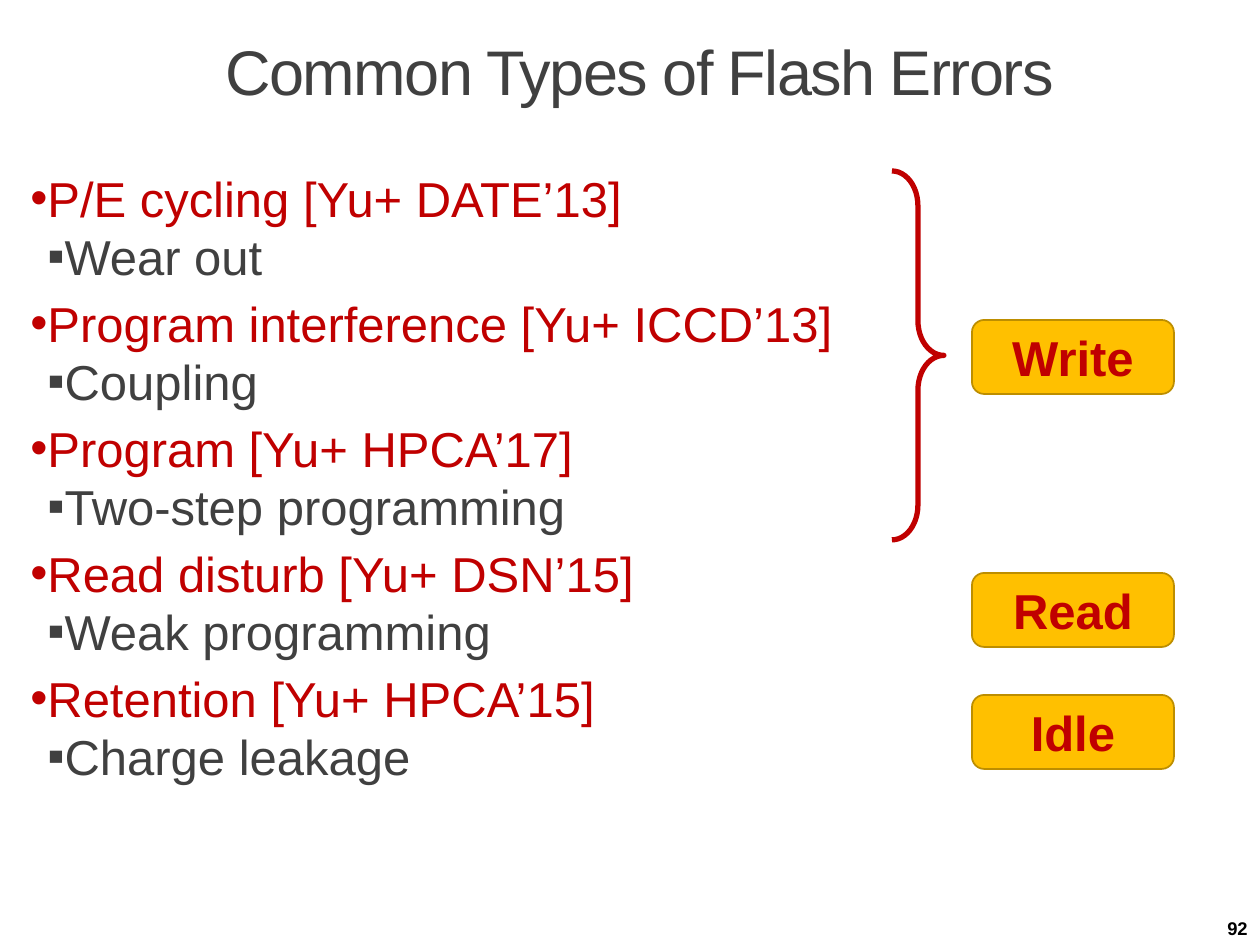
from lxml import etree
from pptx import Presentation
from pptx.dml.color import RGBColor
from pptx.enum.shapes import MSO_SHAPE
from pptx.enum.text import MSO_ANCHOR, PP_ALIGN
from pptx.oxml.ns import qn
from pptx.util import Pt

PX = 914400 // 126
ROUNDED, BRACE = MSO_SHAPE.ROUNDED_RECTANGLE, MSO_SHAPE.RIGHT_BRACE
TOP, MIDDLE, BOTTOM = MSO_ANCHOR.TOP, MSO_ANCHOR.MIDDLE, MSO_ANCHOR.BOTTOM
CENTER, RIGHT = PP_ALIGN.CENTER, PP_ALIGN.RIGHT
COLORS = {name: RGBColor.from_string(value) for name, value in {
    "white": "FFFFFF", "black": "000000", "gray": "404040",
    "red": "C00000", "amber": "FFC000", "border": "BD8E00"}.items()}


def format_text(paragraph, size, color, bold=False, align=None):
    paragraph.alignment = align
    font = paragraph.runs[0].font
    font.name, font.size, font.bold = "Arial", Pt(size), bold
    font.color.rgb = COLORS[color]


def add_text_frame(left, top, width, height, anchor):
    box = slide.shapes.add_textbox(left * PX, top * PX, width * PX, height * PX)
    box.text_frame.word_wrap = True
    box.text_frame.vertical_anchor = anchor
    return box.text_frame


presentation = Presentation()
presentation.slide_width, presentation.slide_height = 1260 * PX, 945 * PX
slide = presentation.slides.add_slide(presentation.slide_layouts[6])

# Title
title = add_text_frame(0, 0, 1260, 150, MIDDLE)
title.text = "Common Types of Flash Errors"
paragraph = title.paragraphs[0]
format_text(paragraph, 36, "gray", align=CENTER)
paragraph.line_spacing = 0.9
paragraph._p.get_or_add_pPr().set("marL", str(19 * PX))
paragraph.runs[0]._r.get_or_add_rPr().set("spc", "-90")

# Error types, each with its cause
errors = [
    ("P/E cycling [Yu+ DATE’13]", "Wear out"),
    ("Program interference [Yu+ ICCD’13]", "Coupling"),
    ("Program [Yu+ HPCA’17]", "Two-step programming"),
    ("Read disturb [Yu+ DSN’15]", "Weak programming"),
    ("Retention [Yu+ HPCA’15]", "Charge leakage"),
]
# color, bullet, left margin, hanging indent, space before
levels = [("red", "•", 9, 9, 9.8), ("gray", "▪", 28, 11, 4.5)]
body = add_text_frame(18, 171, 1226, 720, TOP)
body.text = "\n".join(line for error in errors for line in error)
for index, paragraph in enumerate(body.paragraphs):
    level = index % 2
    color, bullet, margin, hanging, space = levels[level]
    format_text(paragraph, 28, color)
    paragraph.level = level
    paragraph.line_spacing = 0.85
    paragraph.space_before = Pt(space)
    properties = paragraph._p.get_or_add_pPr()
    properties.set("marL", str(margin * PX))
    properties.set("indent", str(-hanging * PX))
    etree.SubElement(properties, qn("a:buFont")).set("typeface", "Arial")
    etree.SubElement(properties, qn("a:buChar")).set("char", bullet)

# Page number
number = add_text_frame(1129, 898, 131, 47, BOTTOM)
number.text = "92"
format_text(number.paragraphs[0], 10.5, "black", True, RIGHT)

# Operation labels
for label, top in [("Write", 320), ("Read", 573), ("Idle", 695)]:
    shape = slide.shapes.add_shape(ROUNDED, 972 * PX, top * PX, 202 * PX, 74 * PX)
    shape.shadow.inherit = False
    shape.fill.solid()
    shape.fill.fore_color.rgb = COLORS["amber"]
    shape.line.color.rgb = COLORS["border"]
    shape.line.width = Pt(1)
    shape.text_frame.text = label
    shape.text_frame.vertical_anchor = MIDDLE
    format_text(shape.text_frame.paragraphs[0], 28, "red", True, CENTER)

# Brace grouping the write errors
brace = slide.shapes.add_shape(BRACE, 892 * PX, 171 * PX, 52 * PX, 369 * PX)
brace.shadow.inherit = False
brace.adjustments[0], brace.adjustments[1] = 0.67, 0.5
brace.fill.background()
brace.line.color.rgb = COLORS["red"]
brace.line.width = Pt(3)

presentation.save("out.pptx")
